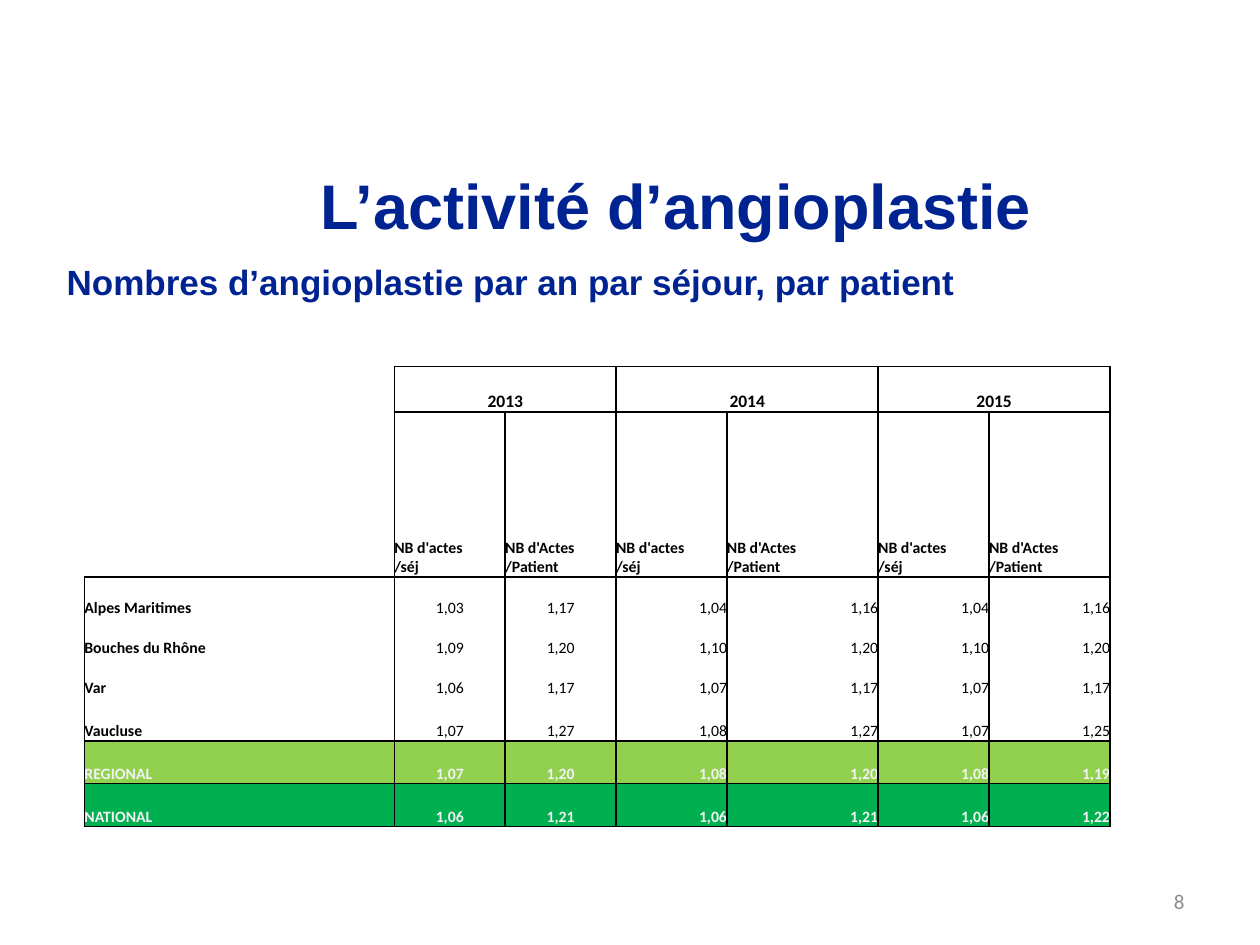
from lxml.etree import SubElement
from pptx import Presentation
from pptx.dml.color import RGBColor
from pptx.enum.text import MSO_ANCHOR, PP_ALIGN
from pptx.oxml.ns import qn
from pptx.util import Inches, Pt

WIDTH, HEIGHT = Inches(10), Inches(7.5)
NAVY = RGBColor(0x00, 0x23, 0x92)
GREY = RGBColor(0x8C, 0x8C, 0x8C)
BLACK = RGBColor(0x00, 0x00, 0x00)
WHITE = RGBColor(0xFF, 0xFF, 0xFF)
PALE = RGBColor(0xF2, 0xF2, 0xF2)
LIME = RGBColor(0x92, 0xD0, 0x50)
GREEN = RGBColor(0x00, 0xB0, 0x50)

COLUMNS = [24.6, 8.8, 8.8, 8.8, 12, 8.8, 9.6, 6.9]
ROWS = [4.53, 4.8, 17.47, 4.27, 4.27, 4.27, 4.53, 4.53, 4.53, 4.27]
YEARS = ["2013", "2014", "2015"]
MEASURES = ["NB d'actes\n/séj", "NB d'Actes\n/Patient"]
DATA = [
    ["Alpes Maritimes", "1,03", "1,17", "1,04", "1,16", "1,04", "1,16"],
    ["Bouches du Rhône", "1,09", "1,20", "1,10", "1,20", "1,10", "1,20"],
    ["Var", "1,06", "1,17", "1,07", "1,17", "1,07", "1,17"],
    ["Vaucluse", "1,07", "1,27", "1,08", "1,27", "1,07", "1,25"],
    ["REGIONAL", "1,07", "1,20", "1,08", "1,20", "1,08", "1,19"],
    ["NATIONAL", "1,06", "1,21", "1,06", "1,21", "1,06", "1,22"],
]
YEAR_ROW, MEASURE_ROW, DATA_ROW, REGIONAL_ROW, NATIONAL_ROW, LAST_ROW = 1, 2, 3, 7, 8, 9


def across(percent):
    """Return a share of the slide's width."""
    return int(WIDTH * percent / 100)


def down(percent):
    """Return a share of the slide's height."""
    return int(HEIGHT * percent / 100)


def to_box(x, y, w, h):
    """Turn percentages of the slide into left, top, width and height."""
    return across(x), down(y), across(w), down(h)


def write(tf, text, size, color, font="Calibri", bold=False, align=PP_ALIGN.LEFT):
    """Write one evenly formatted paragraph into a text frame."""
    p = tf.paragraphs[0]
    p.text = text
    p.alignment = align
    p.font.name, p.font.size, p.font.bold = font, Pt(size), bold
    p.font.color.rgb = color


def add_title(s, box, text):
    """Place and format the slide title."""
    sp = s.shapes.title
    sp.left, sp.top, sp.width, sp.height = box
    sp.text_frame.vertical_anchor = MSO_ANCHOR.MIDDLE
    write(sp.text_frame, text, 36, NAVY, "Arial", True, PP_ALIGN.CENTER)


def add_text(s, box, text, anchor, *style):
    """Place a wrapped text box."""
    tf = s.shapes.add_textbox(*box).text_frame
    tf.word_wrap = True
    tf.vertical_anchor = anchor
    write(tf, text, *style)


def is_ruled(row, col):
    """Tell whether a cell lies inside the ruled part of the table."""
    first = 1 if row < DATA_ROW else 0
    return YEAR_ROW <= row <= NATIONAL_ROW and first <= col <= 6


def has_rule_above(row, col):
    """Tell whether a horizontal line runs along the top of a cell."""
    inside_data = DATA_ROW < row < REGIONAL_ROW
    return not inside_data and (is_ruled(row, col) or is_ruled(row - 1, col))


def draw_borders(cell, row, col):
    """Draw the four borders of a cell."""
    sides = {
        "a:lnL": is_ruled(row, col) or is_ruled(row, col - 1),
        "a:lnR": is_ruled(row, col) or is_ruled(row, col + 1),
        "a:lnT": has_rule_above(row, col),
        "a:lnB": has_rule_above(row + 1, col),
    }
    tc_pr = cell._tc.get_or_add_tcPr()
    for tag, visible in sides.items():
        ln = SubElement(tc_pr, qn(tag), w=str(Pt(1)))
        if visible:
            fill = SubElement(ln, qn("a:solidFill"))
            SubElement(fill, qn("a:srgbClr"), val=str(BLACK))
        else:
            SubElement(ln, qn("a:noFill"))


def get_fill(row, col):
    """Return the fill colour of a cell, or None."""
    if row in (REGIONAL_ROW, NATIONAL_ROW) and col < 7:
        return LIME if row == REGIONAL_ROW else GREEN
    white_measure = row == MEASURE_ROW and 1 <= col <= 6
    white_label = DATA_ROW <= row < REGIONAL_ROW and col == 0
    return WHITE if white_measure or white_label or row == LAST_ROW else None


def get_text(row, col):
    """Return the wording of a cell."""
    if row == YEAR_ROW and col in (1, 3, 5):
        return YEARS[col // 2]
    if not is_ruled(row, col) or row == YEAR_ROW:
        return ""
    if row == MEASURE_ROW:
        return MEASURES[(col - 1) % 2]
    return DATA[row - DATA_ROW][col]


def get_alignment(row, col):
    """Return the horizontal alignment of a cell."""
    if row == YEAR_ROW:
        return PP_ALIGN.CENTER
    if row == MEASURE_ROW or col == 0:
        return PP_ALIGN.LEFT
    return PP_ALIGN.CENTER if col < 3 else PP_ALIGN.RIGHT


def format_cell(cell, row, col):
    """Set the text, borders and fill of a cell."""
    cell.margin_left = cell.margin_right = cell.margin_top = cell.margin_bottom = 0
    cell.vertical_anchor = MSO_ANCHOR.BOTTOM
    is_total = row in (REGIONAL_ROW, NATIONAL_ROW)
    bold = row < DATA_ROW or col == 0 or is_total
    write(cell.text_frame, get_text(row, col), 10 if row == YEAR_ROW else 9,
          PALE if is_total else BLACK, bold=bold, align=get_alignment(row, col))
    draw_borders(cell, row, col)
    color = get_fill(row, col)
    if color is None:
        cell.fill.background()
    else:
        cell.fill.solid()
        cell.fill.fore_color.rgb = color


def add_activity_table(s, box):
    """Place the table of procedures per stay and per patient."""
    table = s.shapes.add_table(len(ROWS), len(COLUMNS), *box).table
    table.first_row = table.horz_banding = False
    for column, share in zip(table.columns, COLUMNS):
        column.width = across(share)
    for row, share in zip(table.rows, ROWS):
        row.height = down(share)
    for row in range(len(ROWS)):
        for col in range(len(COLUMNS)):
            format_cell(table.cell(row, col), row, col)
    for col in (1, 3, 5):
        table.cell(YEAR_ROW, col).merge(table.cell(YEAR_ROW, col + 1))


def main():
    """Build and save the slide."""
    prs = Presentation()
    prs.slide_width, prs.slide_height = WIDTH, HEIGHT
    s = prs.slides.add_slide(prs.slide_layouts[5])
    add_title(s, to_box(20.9, 15.33, 65.5, 12.53), "L’activité d’angioplastie")
    add_text(s, to_box(4.3, 26.93, 92.1, 65.07),
             "Nombres d’angioplastie par an par séjour, par patient",
             MSO_ANCHOR.TOP, 20, NAVY, "Arial", True)
    add_text(s, to_box(71.7, 92.67, 23.3, 5.33), "8",
             MSO_ANCHOR.MIDDLE, 12, GREY, "Calibri", False, PP_ALIGN.RIGHT)
    add_activity_table(s, to_box(6.7, 34.27, 88.2, 57.6))
    prs.save("out.pptx")


if __name__ == "__main__":
    main()
